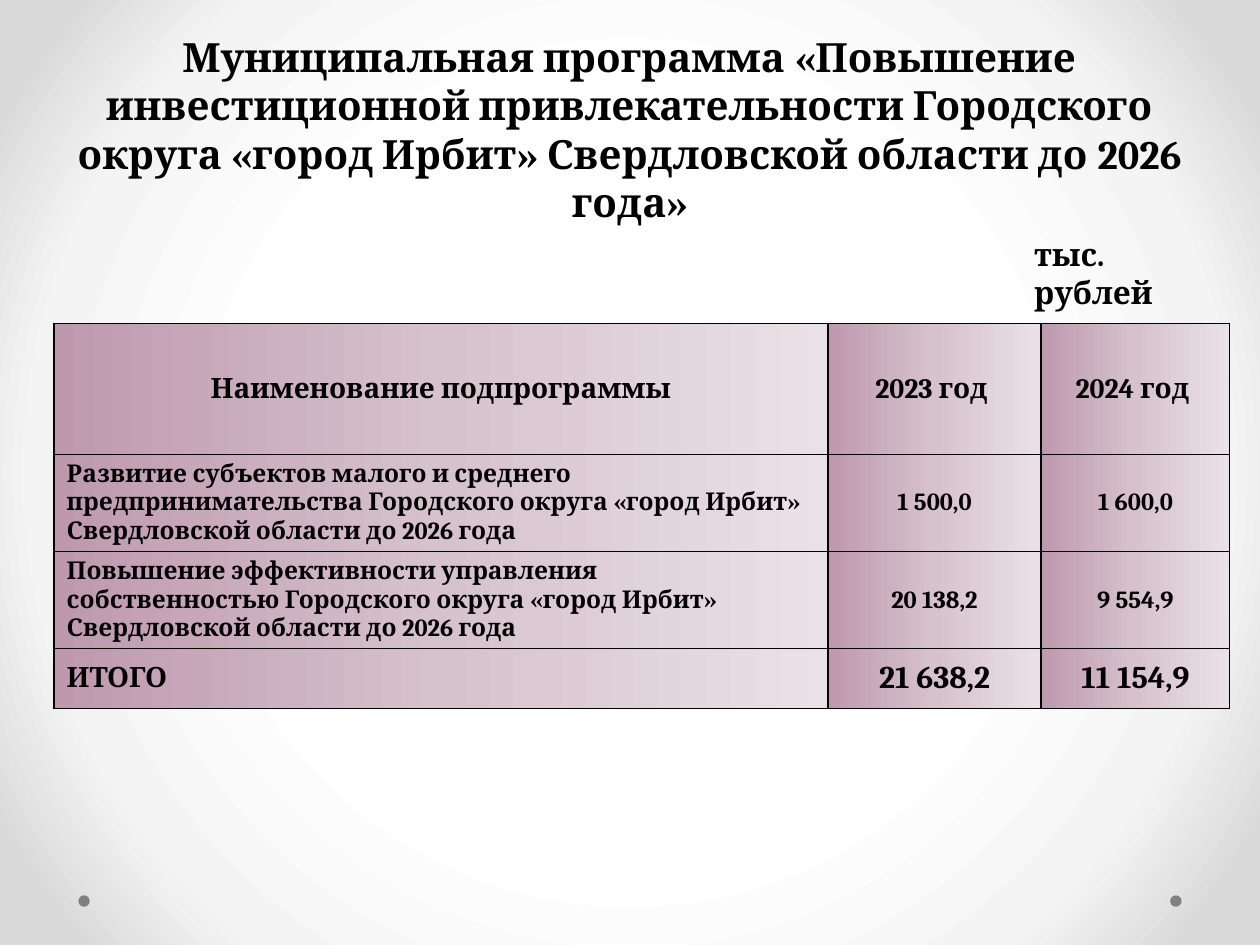
from pptx import Presentation
from pptx.dml.color import RGBColor
from pptx.enum.shapes import MSO_SHAPE
from pptx.enum.text import MSO_ANCHOR, MSO_AUTO_SIZE, PP_ALIGN
from pptx.oxml import parse_xml
from pptx.oxml.ns import nsdecls, qn
from pptx.util import Cm, Pt

FONT = "Cambria"
COLORS = {"text": "000000", "border": "000000", "dot": "808080"}
PAGE_STOPS = [(50, "FFFFFF"), (76, "F4F4F4"), (92, "DADADA")]
CELL_STOPS = [(0, "BE99AE"), (50, "D6C2CD"), (100, "EAE1E6")]
RADIAL = ('<a:path path="circle"><a:fillToRect l="50000" t="50000" '
          'r="50000" b="50000"/></a:path>')
LINEAR = '<a:lin ang="0" scaled="0"/>'

TITLE = ("Муниципальная программа «Повышение инвестиционной привлекательности "
         "Городского округа «город Ирбит» Свердловской области до 2026 года»")
ROWS = [
    (["Наименование подпрограммы", "2023 год ", "2024 год "], [16, 16, 16]),
    (["Развитие субъектов малого и среднего предпринимательства Городского "
      "округа «город Ирбит» Свердловской области до 2026 года",
      "1 500,0", "1 600,0"], [14, 14, 14]),
    (["Повышение эффективности управления собственностью Городского "
      "округа «город Ирбит» Свердловской области до 2026 года",
      "20 138,2", "9 554,9"], [14, 14, 14]),
    (["ИТОГО", "21 638,2", "11 154,9"], [16, 18, 18]),
]
COL_WIDTHS = [15.6, 4.3, 3.8]
ROW_HEIGHTS = [2.64, 1.57, 1.6, 1.2]


def gradient(stops, direction):
    """Return a gradient fill element."""
    gs = "".join(f'<a:gs pos="{pos * 1000}"><a:srgbClr val="{color}"/></a:gs>'
                 for pos, color in stops)
    return parse_xml(f'<a:gradFill {nsdecls("a")} rotWithShape="1">'
                     f'<a:gsLst>{gs}</a:gsLst>{direction}</a:gradFill>')


def write(tf, text, size, align):
    """Put one bold run into a text frame."""
    p = tf.paragraphs[0]
    p.alignment = align
    r = p.add_run()
    r.text = text
    r.font.name = FONT
    r.font.size = Pt(size)
    r.font.bold = True
    r.font.color.rgb = RGBColor.from_string(COLORS["text"])


def add_background(s, width, left, top, size):
    """Paint the page and place a dot near each lower corner."""
    s.background.fill.solid()
    bg = s.element.find(".//" + qn("p:bgPr"))
    bg.replace(bg[0], gradient(PAGE_STOPS, RADIAL))
    for x in (left, width - left - size):
        dot = s.shapes.add_shape(MSO_SHAPE.OVAL, Cm(x), Cm(top), Cm(size), Cm(size))
        dot.shadow.inherit = False
        dot.fill.solid()
        dot.fill.fore_color.rgb = RGBColor.from_string(COLORS["dot"])
        dot.line.fill.background()


def add_title(s, left, top, width, height):
    """Place and format the title placeholder."""
    sp = s.shapes.title
    sp.left, sp.top, sp.width, sp.height = Cm(left), Cm(top), Cm(width), Cm(height)
    tf = sp.text_frame
    tf.auto_size = MSO_AUTO_SIZE.NONE
    tf.vertical_anchor = MSO_ANCHOR.BOTTOM
    write(tf, TITLE, 23, PP_ALIGN.CENTER)


def add_unit(s, left, top, width, height):
    """Label the unit of the table values."""
    sp = s.shapes.add_textbox(Cm(left), Cm(top), Cm(width), Cm(height))
    sp.text_frame.word_wrap = True
    write(sp.text_frame, "тыс. рублей", 18, PP_ALIGN.LEFT)


def style_cell(cell):
    """Give a cell its borders and gradient."""
    cell.vertical_anchor = MSO_ANCHOR.MIDDLE
    tc_pr = cell._tc.get_or_add_tcPr()
    for side in ("lnL", "lnR", "lnT", "lnB"):
        tc_pr.append(parse_xml(
            f'<a:{side} {nsdecls("a")} w="{Pt(1)}"><a:solidFill>'
            f'<a:srgbClr val="{COLORS["border"]}"/></a:solidFill></a:{side}>'))
    tc_pr.append(gradient(CELL_STOPS, LINEAR))


def add_budget_table(s, left, top):
    """Build the table of subprogrammes and yearly amounts."""
    table = s.shapes.add_table(
        len(ROWS), len(COL_WIDTHS), Cm(left), Cm(top),
        Cm(sum(COL_WIDTHS)), Cm(sum(ROW_HEIGHTS))).table
    for col, width in zip(table.columns, COL_WIDTHS):
        col.width = Cm(width)
    for i, (texts, sizes) in enumerate(ROWS):
        table.rows[i].height = Cm(ROW_HEIGHTS[i])
        for j, (text, size) in enumerate(zip(texts, sizes)):
            cell = table.cell(i, j)
            style_cell(cell)
            align = PP_ALIGN.LEFT if i and not j else PP_ALIGN.CENTER
            write(cell.text_frame, text, size, align)


def main():
    """Build and save the slide."""
    prs = Presentation()
    prs.slide_width, prs.slide_height = Cm(25.4), Cm(19.05)
    s = prs.slides.add_slide(prs.slide_layouts[5])
    add_background(s, 25.4, 1.58, 18.05, 0.23)
    add_title(s, 1.27, 0.33, 22.86, 4.34)
    add_budget_table(s, 1.09, 6.52)
    add_unit(s, 20.6, 4.62, 3.91, 1.02)
    prs.save("out.pptx")


if __name__ == "__main__":
    main()
